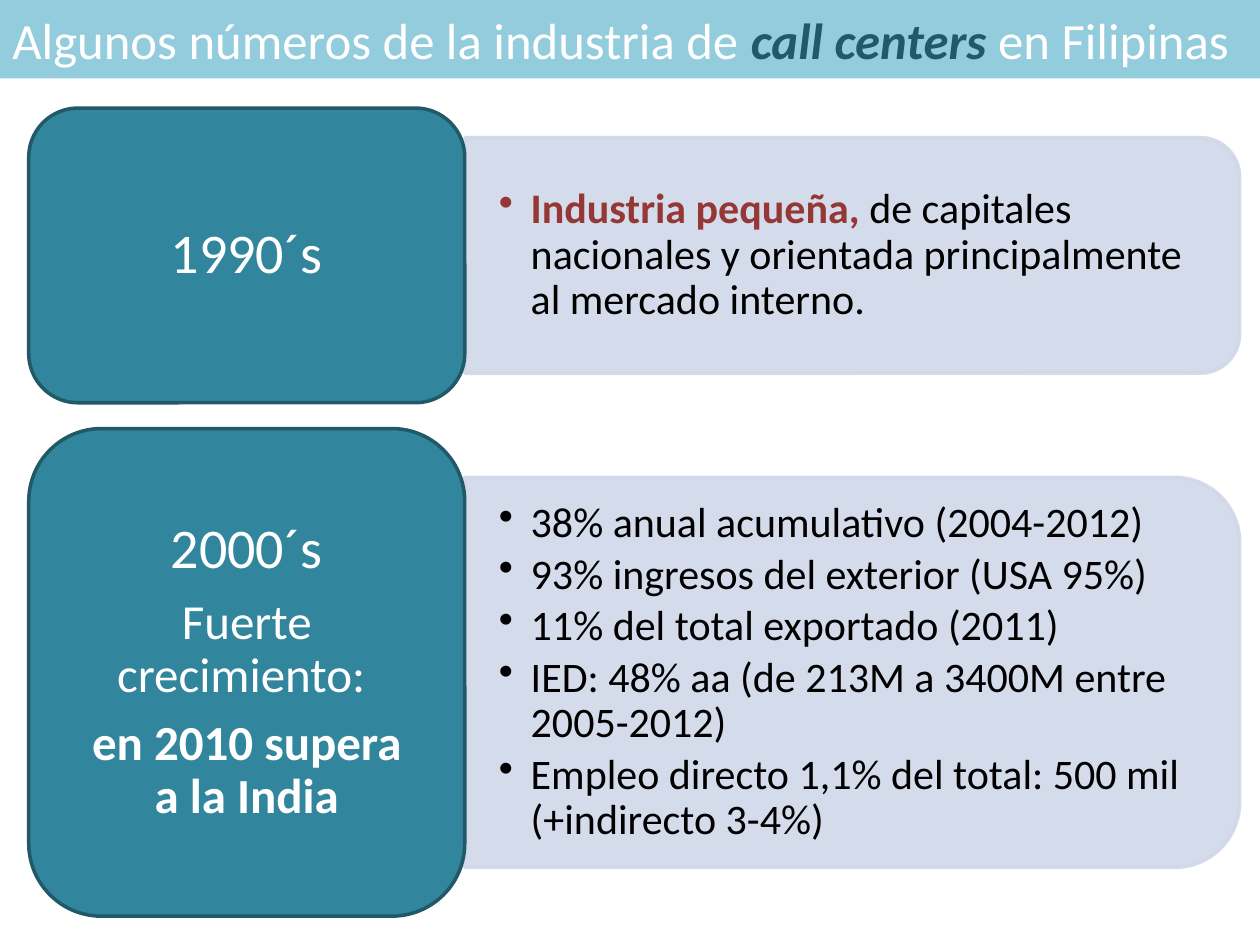
import pptx
import pptx.dml.color
import pptx.enum.shapes
import pptx.enum.text
import pptx.oxml
import pptx.oxml.ns
import pptx.util
from pptx.util import Cm

RGBColor = pptx.dml.color.RGBColor
SHAPES = pptx.enum.shapes.MSO_SHAPE
ALIGN = pptx.enum.text.PP_ALIGN

SKY = RGBColor(0x93, 0xCD, 0xDD)
TEAL = RGBColor(0x31, 0x85, 0x9C)
DARK_TEAL = RGBColor(0x21, 0x59, 0x68)
PALE_BLUE = RGBColor(0xD0, 0xD8, 0xE8)
DARK_RED = RGBColor(0x95, 0x37, 0x35)
WHITE = RGBColor(0xFF, 0xFF, 0xFF)
BLACK = RGBColor(0, 0, 0)

SLIDE_WIDTH, SLIDE_HEIGHT = Cm(25.4), Cm(19.05)
TILE_LEFT, TILE_WIDTH = Cm(0.58), Cm(8.79)
PANEL_LEFT, PANEL_WIDTH = TILE_LEFT + TILE_WIDTH, Cm(15.62)
PANEL_SHARE = 0.8  # panel height relative to its tile


def add_filled_shape(slide, kind, box, fill, line=None):
    shape = slide.shapes.add_shape(kind, *box)
    shape.shadow.inherit = False
    shape.fill.solid()
    shape.fill.fore_color.rgb = fill
    if line is None:
        shape.line.fill.background()
    else:
        shape.line.color.rgb = line
        shape.line.width = pptx.util.Pt(2)
    return shape


def set_up_frame(frame, side, vertical):
    frame.word_wrap = True
    frame.vertical_anchor = pptx.enum.text.MSO_ANCHOR.MIDDLE
    frame.margin_left = frame.margin_right = side
    frame.margin_top = frame.margin_bottom = vertical


def add_run(paragraph, text, size, color, bold=False, italic=False):
    run = paragraph.add_run()
    run.text = text
    font = run.font
    font.name, font.size = "Calibri", pptx.util.Pt(size)
    font.bold, font.italic = bold, italic
    font.color.rgb = color


def add_paragraphs(frame, count, space_after):
    """Yield the frame's paragraphs, spaced at 90 % line height."""
    for index in range(count):
        paragraph = frame.add_paragraph() if index else frame.paragraphs[0]
        paragraph.line_spacing = 0.9
        paragraph.space_after = pptx.util.Pt(space_after)
        yield paragraph


def make_translucent(shape):
    """Set 90 % opacity on fill and line."""
    for color in shape._element.spPr.iter(pptx.oxml.ns.qn("a:srgbClr")):
        color.append(pptx.oxml.parse_xml(
            f'<a:alpha {pptx.oxml.ns.nsdecls("a")} val="90000"/>'))


def add_bullet(paragraph):
    properties = paragraph._p.get_or_add_pPr()
    properties.set("marL", str(Cm(0.64)))
    properties.set("indent", str(-Cm(0.64)))
    properties.append(pptx.oxml.parse_xml(
        f'<a:buChar {pptx.oxml.ns.nsdecls("a")} char="•"/>'))


def add_title(slide):
    banner = add_filled_shape(slide, SHAPES.RECTANGLE,
                              (0, 0, SLIDE_WIDTH, Cm(1.58)), SKY)
    set_up_frame(banner.text_frame, Cm(0.25), Cm(0.13))
    paragraph = banner.text_frame.paragraphs[0]
    paragraph.alignment = ALIGN.LEFT
    add_run(paragraph, "Algunos números de la industria de ", 29, WHITE)
    add_run(paragraph, "call centers ", 29, DARK_TEAL, bold=True, italic=True)
    add_run(paragraph, "en Filipinas", 29, WHITE)


def add_panel(slide, center, height, bullets):
    """Add a panel rounded on its right side, with bulleted facts over it."""
    middle = PANEL_LEFT + PANEL_WIDTH // 2
    panel = add_filled_shape(
        slide, SHAPES.ROUND_2_SAME_RECTANGLE,
        (middle - height // 2, center - PANEL_WIDTH // 2, height, PANEL_WIDTH),
        PALE_BLUE, PALE_BLUE)
    panel.rotation = 90
    make_translucent(panel)

    facts = slide.shapes.add_textbox(PANEL_LEFT, center - height // 2,
                                     Cm(15.3), height).text_frame
    set_up_frame(facts, Cm(0.69), Cm(0.36))
    for paragraph, runs in zip(add_paragraphs(facts, len(bullets), 3.6), bullets):
        add_bullet(paragraph)
        for text, color, bold in runs:
            add_run(paragraph, text, 24, color, bold)


def add_tile(slide, top, height, lines):
    tile = add_filled_shape(slide, SHAPES.ROUNDED_RECTANGLE,
                            (TILE_LEFT, top, TILE_WIDTH, height), TEAL, DARK_TEAL)
    frame = tile.text_frame
    set_up_frame(frame, Cm(0.7), Cm(0.5))
    for paragraph, (text, size, bold) in zip(
            add_paragraphs(frame, len(lines), 9), lines):
        paragraph.alignment = ALIGN.CENTER
        add_run(paragraph, text, size, WHITE, bold)


def add_decade(slide, top, height, lines, bullets):
    add_panel(slide, top + height // 2, int(height * PANEL_SHARE), bullets)
    add_tile(slide, top, height, lines)


def main():
    presentation = pptx.Presentation()
    presentation.slide_width = SLIDE_WIDTH
    presentation.slide_height = SLIDE_HEIGHT
    slide = presentation.slides.add_slide(presentation.slide_layouts[6])

    add_title(slide)
    add_decade(
        slide, Cm(2.18), Cm(5.94),
        [("1990´s", 32, False)],
        [[("Industria pequeña, ", DARK_RED, True),
          ("de capitales nacionales y orientada principalmente "
           "al mercado interno.", BLACK, False)]])
    growth_facts = [
        "38% anual acumulativo (2004-2012)",
        "93% ingresos del exterior (USA 95%)",
        "11% del total exportado (2011)",
        "IED: 48% aa (de 213M a 3400M entre 2005-2012)",
        "Empleo directo 1,1% del total: 500 mil (+indirecto 3-4%)",
    ]
    add_decade(
        slide, Cm(8.64), Cm(9.83),
        [("2000´s", 32, False),
         ("Fuerte crecimiento: ", 28, False),
         ("en 2010 supera a la India", 28, True)],
        [[(fact, BLACK, False)] for fact in growth_facts])

    presentation.save("out.pptx")


if __name__ == "__main__":
    main()
